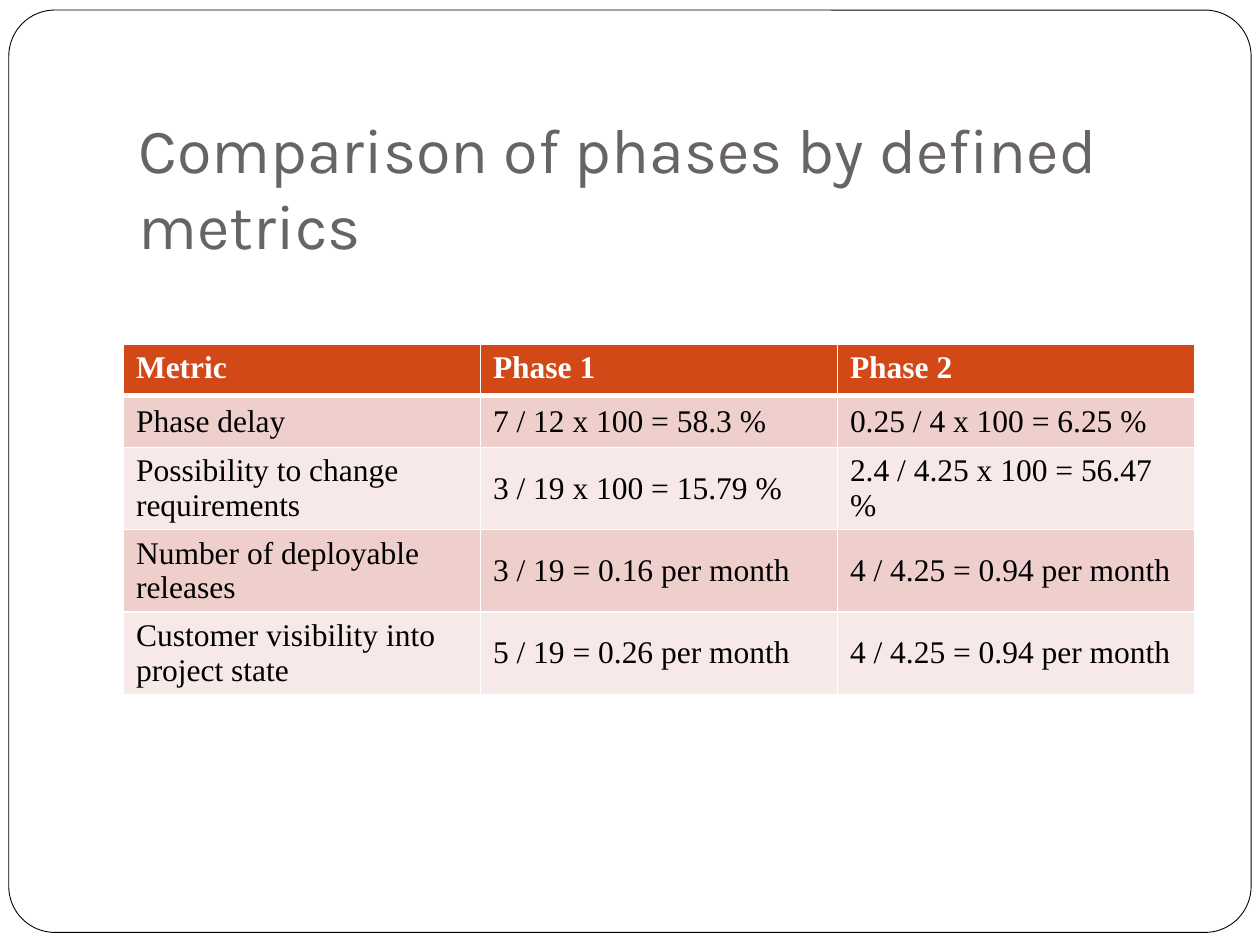
from lxml import etree
from pptx import Presentation
from pptx.dml.color import RGBColor
from pptx.enum import shapes, text
from pptx.oxml import ns
from pptx.util import Inches, Pt

METRICS = [
    ("Metric", "Phase 1", "Phase 2"),
    ("Phase delay", "7 / 12 x 100 = 58.3 %", "0.25 / 4 x 100 = 6.25 %"),
    ("Possibility to change requirements", "3 / 19 x 100 = 15.79 %", "2.4 / 4.25 x 100 = 56.47 %"),
    ("Number of deployable releases", "3 / 19 = 0.16 per month", "4 / 4.25 = 0.94 per month"),
    ("Customer visibility into project state", "5 / 19 = 0.26 per month", "4 / 4.25 = 0.94 per month"),
]


def color(value):
    return RGBColor.from_string(value)


def write(frame, words, *, font, size, ink, bold=False, anchor=text.MSO_ANCHOR.MIDDLE):
    frame.vertical_anchor = anchor
    para = frame.paragraphs[0]
    para.alignment = text.PP_ALIGN.LEFT
    span = para.add_run()
    span.text = words
    span.font.name = font
    span.font.size = Pt(size)
    span.font.bold = bold
    span.font.color.rgb = color(ink)


def fill(target, value):
    target.fill.solid()
    target.fill.fore_color.rgb = color(value)


def set_borders(cell, value, **widths):
    properties = cell._tc.get_or_add_tcPr()
    for index, side in enumerate("LRTB"):
        line = etree.Element(ns.qn(f"a:ln{side}"), w=str(Pt(widths.get(side, 1))))
        solid = etree.SubElement(line, ns.qn("a:solidFill"))
        etree.SubElement(solid, ns.qn("a:srgbClr"), val=value)
        properties.insert(index, line)


class Slide:
    title_font = "Karla"
    table_font = "Times New Roman"
    white = "FFFFFF"
    header = "D34817"
    bands = ("EFCFCC", "F7E9E8")

    def __init__(self, deck):
        self.page = deck.slides.add_slide(deck.slide_layouts[5])

    def frame(self, left, top, width, height):
        box = self.page.shapes.add_shape(
            shapes.MSO_SHAPE.ROUNDED_RECTANGLE,
            Inches(left), Inches(top), Inches(width), Inches(height))
        box.adjustments[0] = 0.05
        box.shadow.inherit = False
        fill(box, self.white)
        box.line.color.rgb = color("000000")
        box.line.width = Pt(0.5)
        self.page.shapes.title.element.addprevious(box.element)

    def title(self, words, left, top, width, height):
        box = self.page.shapes.title
        box.left, box.top = Inches(left), Inches(top)
        box.width, box.height = Inches(width), Inches(height)
        frame = box.text_frame
        frame.word_wrap = True
        frame.auto_size = text.MSO_AUTO_SIZE.NONE
        frame.margin_bottom = Inches(0.1)
        write(frame, words, font=self.title_font, size=36, ink="696464",
              anchor=text.MSO_ANCHOR.BOTTOM)

    def table(self, rows, left, top, width, row_height):
        table = self.page.shapes.add_table(
            len(rows), len(rows[0]), Inches(left), Inches(top),
            Inches(width), Inches(row_height * len(rows))).table
        for r, row in enumerate(rows):
            table.rows[r].height = Inches(row_height)
            is_header = r == 0
            for c, words in enumerate(row):
                cell = table.cell(r, c)
                fill(cell, self.header if is_header else self.bands[(r - 1) % 2])
                set_borders(cell, self.white, T=3 if r == 1 else 1, B=3 if is_header else 1)
                write(cell.text_frame, words, font=self.table_font, size=18,
                      ink=self.white if is_header else "000000", bold=is_header)
                cell.vertical_anchor = (
                    text.MSO_ANCHOR.TOP if is_header else text.MSO_ANCHOR.MIDDLE)


def main():
    deck = Presentation()
    deck.slide_width, deck.slide_height = Inches(10), Inches(7.5)
    slide = Slide(deck)
    slide.frame(0.07, 0.08, 9.86, 7.32)
    slide.title("Comparison of phases by defined metrics", 1, 0.93, 8.5, 1.25)
    slide.table(METRICS, 0.98, 2.73, 8.5, 0.41)
    deck.save("out.pptx")


if __name__ == "__main__":
    main()
